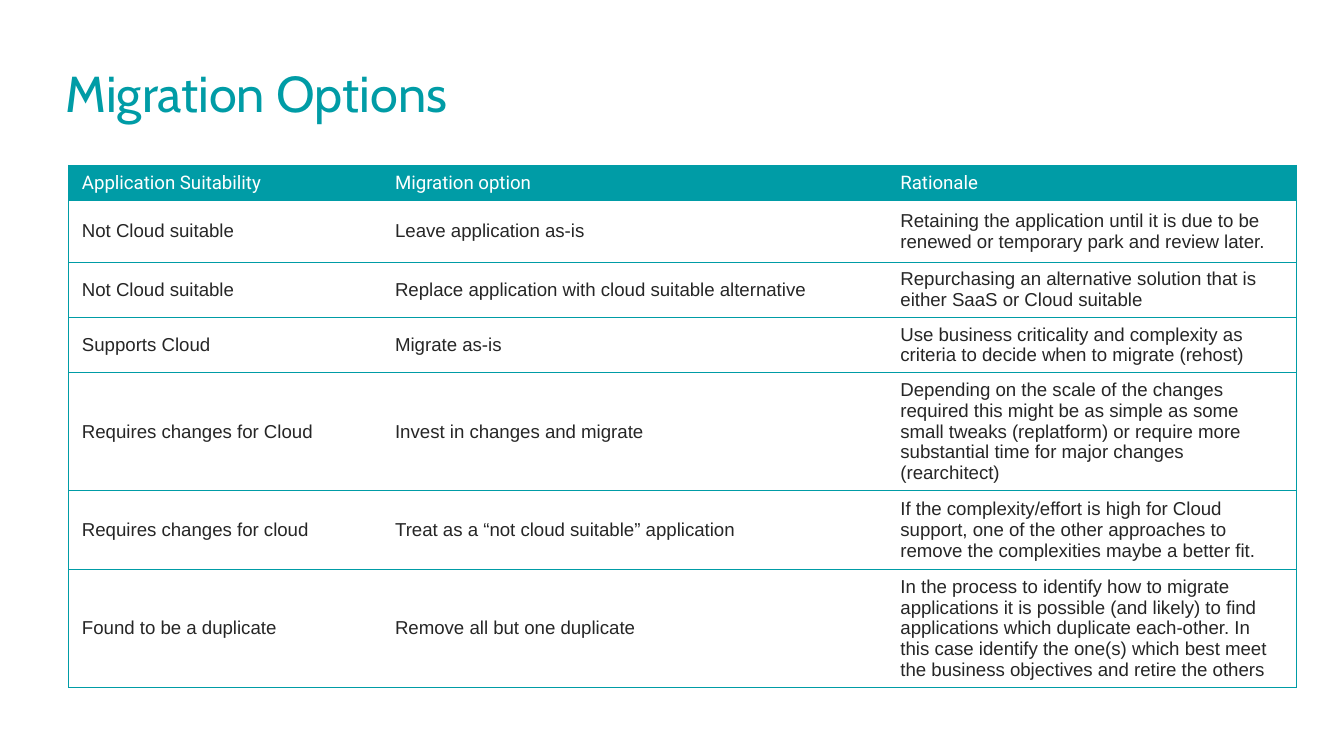
from dataclasses import dataclass

from lxml.etree import SubElement
from pptx import Presentation
from pptx.dml.color import RGBColor as RGB
from pptx.enum.text import MSO_ANCHOR as Anchor, PP_ALIGN as Align
from pptx.oxml.ns import qn
from pptx.util import Inches, Pt


@dataclass(frozen=True)
class Theme:
    """Colours, fonts and type sizes of the slide."""
    accent: str = "009CA6"
    ink: str = "262626"
    paper: str = "FFFFFF"
    title_font: str = "Cabin"
    head_font: str = "Roboto"
    body_font: str = "Arial"
    title_size: float = 27
    table_size: float = 10
    rule: float = 0.5


THEME = Theme()
COLS = [2.33, 3.76, 3.05]
ROWS = [0.23, 0.46, 0.33, 0.33, 0.72, 0.59, 0.85]
OPTIONS = [
    ("Application Suitability", "Migration option", "Rationale"),
    ("Not Cloud suitable", "Leave application as-is",
     "Retaining the application until it is due to be renewed or temporary park and review later."),
    ("Not Cloud suitable", "Replace application with cloud suitable alternative",
     "Repurchasing an alternative solution that is either SaaS or Cloud suitable"),
    ("Supports Cloud", "Migrate as-is",
     "Use business criticality and complexity as criteria to decide when to migrate (rehost)"),
    ("Requires changes for Cloud", "Invest in changes and migrate",
     "Depending on the scale of the changes required this might be as simple as some small "
     "tweaks (replatform) or require more substantial time for major changes (rearchitect)"),
    ("Requires changes for cloud", "Treat as a “not cloud suitable” application",
     "If the complexity/effort is high for Cloud support, one of the other approaches to "
     "remove the complexities maybe a better fit."),
    ("Found to be a duplicate", "Remove all but one duplicate",
     "In the process to identify how to migrate applications it is possible (and likely) to "
     "find applications which duplicate each-other. In this case identify the one(s) which "
     "best meet the business objectives and retire the others"),
]


def style(p, font, size, color):
    """Set the font of a whole paragraph."""
    p.font.name, p.font.size = font, Pt(size)
    p.font.color.rgb = RGB.from_string(color)


def set_title(s, text):
    """Fill and place the title placeholder."""
    sp = s.shapes.title
    sp.left, sp.top, sp.width, sp.height = map(Inches, (0.39, 0.41, 9.13, 0.74))
    tf = sp.text_frame
    tf.text = text
    tf.vertical_anchor = Anchor.TOP
    p = tf.paragraphs[0]
    p.alignment = Align.LEFT
    style(p, THEME.title_font, THEME.title_size, THEME.accent)


def set_borders(cell, ruled):
    """Rule the named sides of a cell and clear the others."""
    tcPr = cell._tc.get_or_add_tcPr()
    for i, side in enumerate("LRTB"):
        ln = tcPr.makeelement(qn(f"a:ln{side}"), {"w": str(Pt(THEME.rule))})
        tcPr.insert(i, ln)
        if side in ruled:
            fill = SubElement(ln, qn("a:solidFill"))
            SubElement(fill, qn("a:srgbClr"), val=THEME.accent)
        else:
            SubElement(ln, qn("a:noFill"))


def set_cell(cell, text, is_head, ruled):
    """Write and format one table cell."""
    cell.text = text
    cell.vertical_anchor = Anchor.TOP if is_head else Anchor.MIDDLE
    cell.fill.solid()
    cell.fill.fore_color.rgb = RGB.from_string(THEME.accent if is_head else THEME.paper)
    style(cell.text_frame.paragraphs[0],
          THEME.head_font if is_head else THEME.body_font,
          THEME.table_size, THEME.paper if is_head else THEME.ink)
    set_borders(cell, ruled)


def add_options_table(s, data):
    """Add the table with horizontal rules and an outer frame."""
    box = map(Inches, (0.51, 1.23, sum(COLS), sum(ROWS)))
    sp = s.shapes.add_table(len(ROWS), len(COLS), *box)
    table = sp.table
    table.horz_banding = False
    for col, width in zip(table.columns, COLS):
        col.width = Inches(width)
    for row, height in zip(table.rows, ROWS):
        row.height = Inches(height)
    sp.height = Inches(4.06)
    outer = {0: "L", len(COLS) - 1: "R"}
    for r, texts in enumerate(data):
        for c, text in enumerate(texts):
            set_cell(table.cell(r, c), text, r == 0, "TB" + outer.get(c, ""))


def main():
    """Build and save the slide."""
    prs = Presentation()
    prs.slide_width = Inches(10)
    prs.slide_height = prs.slide_width * 9 // 16
    s = prs.slides.add_slide(prs.slide_layouts[5])
    set_title(s, "Migration Options")
    add_options_table(s, OPTIONS)
    prs.save("out.pptx")


if __name__ == "__main__":
    main()
